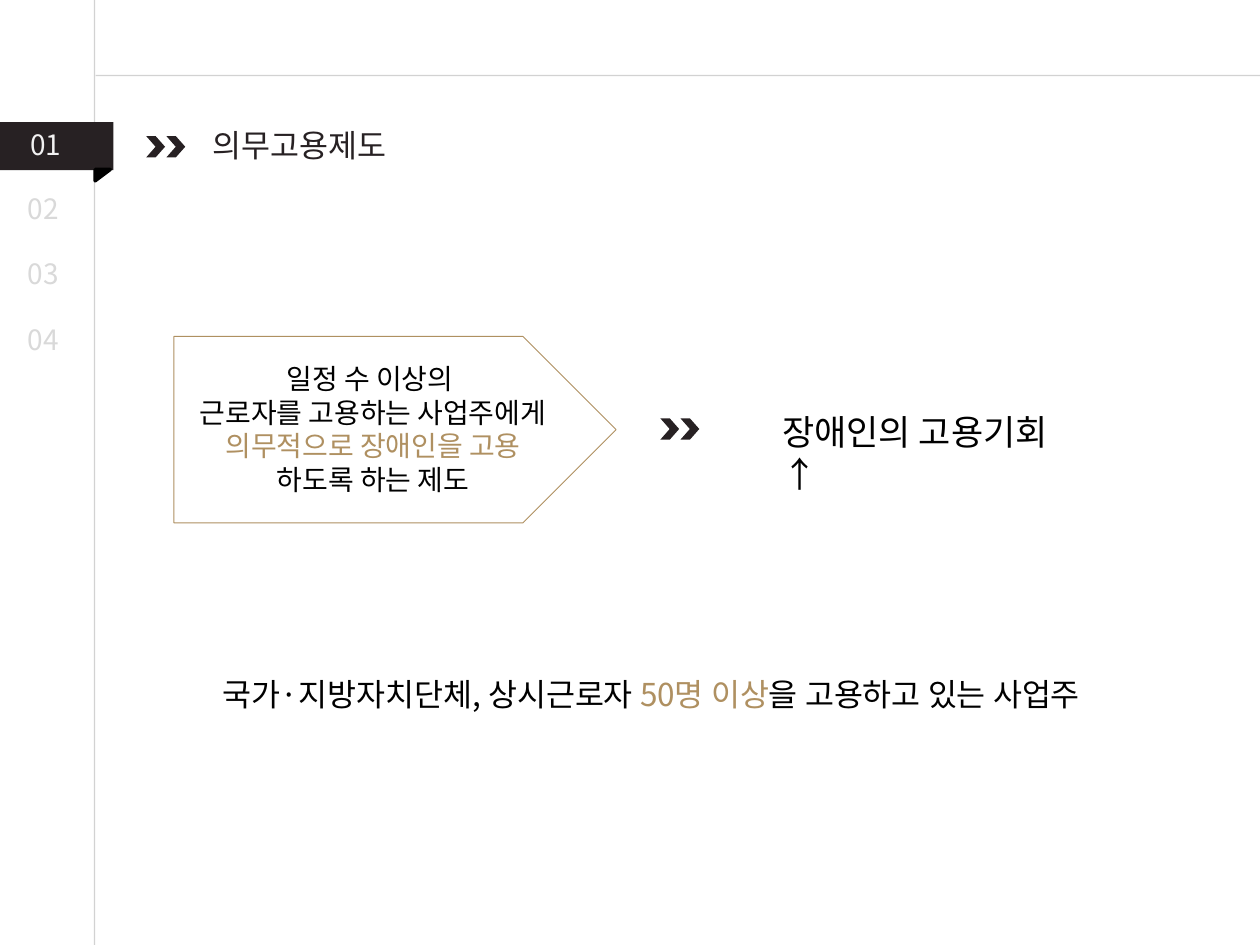
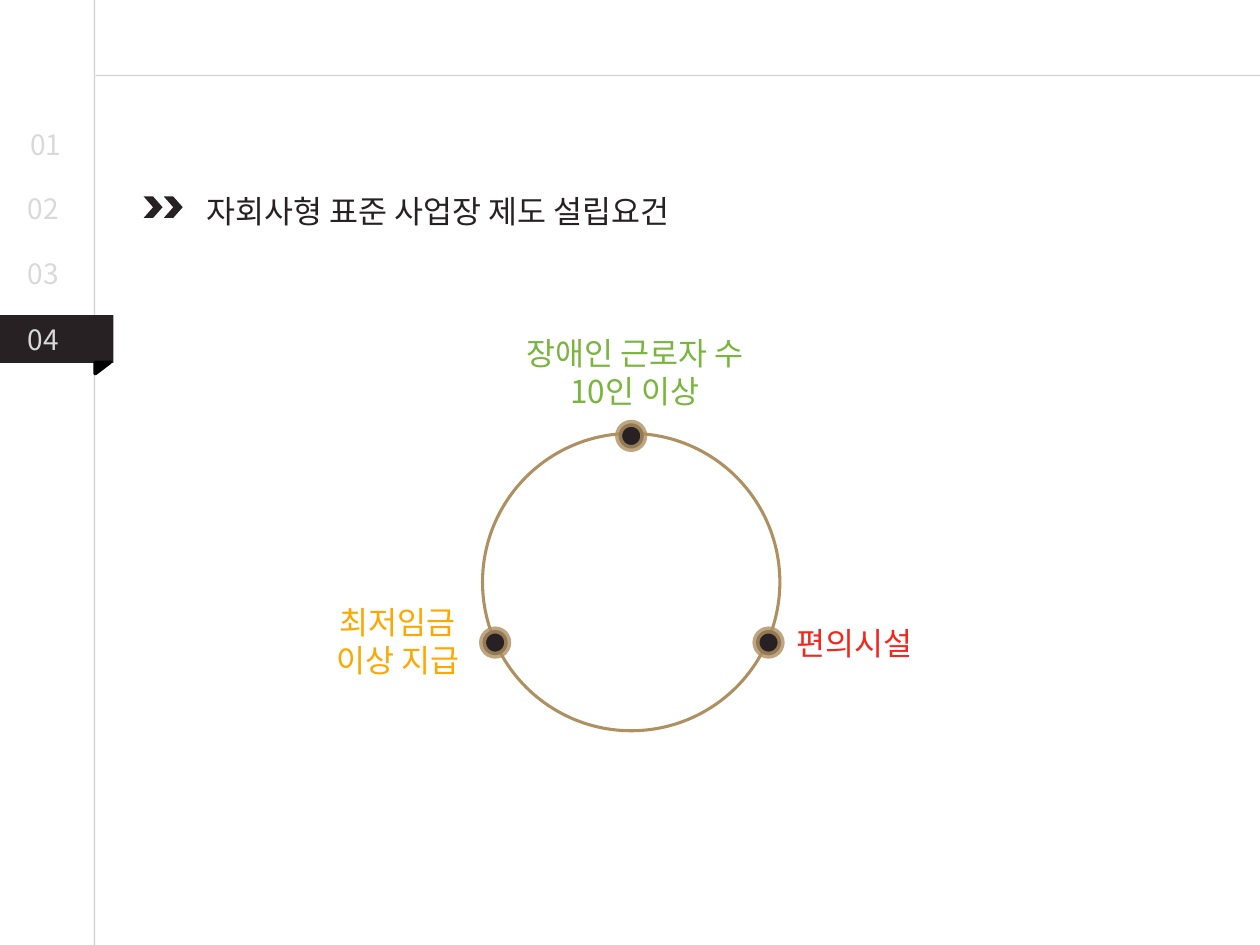
from dataclasses import dataclass

from lxml.etree import SubElement
from pptx import Presentation
from pptx.dml.color import RGBColor
from pptx.enum.shapes import MSO_CONNECTOR, MSO_SHAPE
from pptx.enum.text import MSO_ANCHOR, MSO_AUTO_SIZE, PP_ALIGN
from pptx.oxml.ns import qn
from pptx.util import Inches, Pt

FONT = "Noto Sans CJK KR"
INK = RGBColor(0x27, 0x21, 0x23)
BLACK = RGBColor(0x00, 0x00, 0x00)
GOLD = RGBColor(0xAF, 0x90, 0x61)
RULE_GREY = RGBColor(0xA6, 0xA6, 0xA6)
PALE = RGBColor(0xD9, 0xD9, 0xD9)
NEAR_WHITE = RGBColor(0xF2, 0xF2, 0xF2)
GREEN = RGBColor(0x7A, 0xB5, 0x3D)
AMBER = RGBColor(0xFD, 0xA8, 0x00)
RED = RGBColor(0xF2, 0x28, 0x1E)

SECTION_TOPS = (0.96, 1.47, 1.99, 2.51)


@dataclass(frozen=True)
class Box:
    left: float
    top: float
    width: float
    height: float

    def lengths(self) -> tuple:
        return tuple(Inches(v) for v in (self.left, self.top, self.width, self.height))


@dataclass(frozen=True)
class Span:
    text: str
    color: RGBColor = BLACK


@dataclass(frozen=True)
class Heading:
    text: str
    box: Box
    align: PP_ALIGN
    chevron_left: float
    chevron_top: float
    section: int
    section_color: RGBColor
    ribbon_top: float


@dataclass(frozen=True)
class Requirement:
    text: str
    color: RGBColor
    label: Box
    marker_left: float
    marker_top: float


# Shared drawing functions
def set_alpha(line, percent: int) -> None:
    color = line._get_or_add_ln().find(qn("a:solidFill"))[0]
    SubElement(color, qn("a:alpha"), val=str(percent * 1000))


def add_rule(slide, start: tuple, end: tuple) -> None:
    rule = slide.shapes.add_connector(
        MSO_CONNECTOR.STRAIGHT, *(Inches(v) for v in start + end))
    rule.line.color.rgb = RULE_GREY
    rule.line.width = Pt(0.75)
    set_alpha(rule.line, 50)
    SubElement(rule._element.spPr, qn("a:effectLst"))


def add_form(slide, kind, box: Box, fill=None, line=None, width: float = 1):
    form = slide.shapes.add_shape(kind, *box.lengths())
    form.shadow.inherit = False
    if fill is None:
        form.fill.background()
    else:
        form.fill.solid()
        form.fill.fore_color.rgb = fill
    if line is None:
        form.line.fill.background()
    else:
        form.line.color.rgb = line
        form.line.width = Pt(width)
    return form


def write(frame, paragraphs: list, size: float, align=PP_ALIGN.CENTER) -> None:
    frame.word_wrap = True
    frame.auto_size = MSO_AUTO_SIZE.NONE
    frame.vertical_anchor = MSO_ANCHOR.TOP
    for index, spans in enumerate(paragraphs):
        paragraph = frame.add_paragraph() if index else frame.paragraphs[0]
        paragraph.alignment = align
        font = paragraph.font
        font.name, font.size = FONT, Pt(size)
        SubElement(font._element, qn("a:ea"), typeface=FONT)
        for span in spans:
            run = paragraph.add_run()
            run.text = span.text
            run.font.color.rgb = span.color


def add_text(slide, box: Box, paragraphs: list, size: float,
             align=PP_ALIGN.CENTER) -> None:
    write(slide.shapes.add_textbox(*box.lengths()).text_frame, paragraphs, size, align)


def add_double_chevron(slide, left: float, top: float) -> None:
    for step in range(2):
        add_form(slide, MSO_SHAPE.CHEVRON,
                 Box(left + 0.16 * step, top, 0.15, 0.17), INK)


def add_section_numbers(slide, heading: Heading) -> None:
    # Ribbon behind the current section, with its folded corner
    add_form(slide, MSO_SHAPE.RECTANGLE,
             Box(-0.01, heading.ribbon_top, 0.91, 0.38), INK)
    fold = add_form(slide, MSO_SHAPE.RIGHT_TRIANGLE,
                    Box(0.77, heading.ribbon_top + 0.36, 0.09, 0.12), BLACK, BLACK, 2)
    fold.rotation = 90
    for number, top in enumerate(SECTION_TOPS, start=1):
        left = 0.14 if number == 1 else 0.12
        color = heading.section_color if number == heading.section else PALE
        add_text(slide, Box(left, top, 0.59, 0.37),
                 [[Span(f"{number:02}", color)]], 16, PP_ALIGN.LEFT)


def add_section_slide(deck, heading: Heading):
    slide = deck.slides.add_slide(deck.slide_layouts[5])
    title = slide.shapes.title
    title.left, title.top, title.width, title.height = heading.box.lengths()
    write(title.text_frame, [[Span(heading.text, INK)]], 18, heading.align)
    add_rule(slide, (0.75, 0), (0.75, 7.5))
    add_rule(slide, (10, 0.6), (0.76, 0.6))
    add_section_numbers(slide, heading)
    add_double_chevron(slide, heading.chevron_left, heading.chevron_top)
    return slide


# Slide 1: mandatory employment
def build_mandatory_employment(deck) -> None:
    slide = add_section_slide(deck, Heading(
        "의무고용제도", Box(1.16, 0.95, 2.44, 0.4), PP_ALIGN.CENTER,
        1.16, 1.08, 1, NEAR_WHITE, 0.97))
    add_form(slide, MSO_SHAPE.PENTAGON, Box(1.38, 2.67, 3.51, 1.48),
             line=GOLD, width=0.5)
    add_text(slide, Box(1.47, 2.82, 2.98, 1.45), [
        [Span("일정 수 이상의 ")],
        [Span("근로자를 고용하는 사업주에게 "), Span("의무적으로 장애인을 고용", GOLD)],
        [Span("하도록 하는 제도")],
    ], 16)
    add_double_chevron(slide, 5.24, 3.32)
    add_text(slide, Box(6.11, 3.21, 2.6, 0.44),
             [[Span("장애인의 고용기회 ↑")]], 20, PP_ALIGN.LEFT)
    add_text(slide, Box(1.57, 5.31, 7.2, 0.4), [[
        Span("국가·지방자치단체, 상시근로자 "), Span("50명 이상", GOLD),
        Span("을 고용하고 있는 사업주"),
    ]], 18)


# Slide 2: requirements placed around a ring
REQUIREMENTS = (
    Requirement("장애인 근로자 수 10인 이상", GREEN, Box(4.04, 2.6, 2, 0.71), 4.91, 3.36),
    Requirement("최저임금 이상 지급", AMBER, Box(2.56, 4.74, 1.19, 0.71), 3.83, 5),
    Requirement("편의시설", RED, Box(6.19, 4.9, 1.19, 0.4), 6, 5),
)


def build_requirements(deck) -> None:
    slide = add_section_slide(deck, Heading(
        "자회사형 표준 사업장 제도 설립요건", Box(1.54, 1.47, 4.17, 0.4),
        PP_ALIGN.LEFT, 1.14, 1.56, 4, PALE, 2.5))
    add_form(slide, MSO_SHAPE.OVAL, Box(3.83, 3.44, 2.36, 2.36),
             line=GOLD, width=1.75)
    for need in REQUIREMENTS:
        marker = add_form(slide, MSO_SHAPE.OVAL,
                          Box(need.marker_left, need.marker_top, 0.2, 0.2),
                          INK, GOLD, 4)
        set_alpha(marker.line, 80)
        add_text(slide, need.label, [[Span(need.text, need.color)]], 18)


def main() -> None:
    deck = Presentation()
    deck.slide_width, deck.slide_height = Inches(10), Inches(7.5)
    build_mandatory_employment(deck)
    build_requirements(deck)
    deck.save("out.pptx")


if __name__ == "__main__":
    main()
